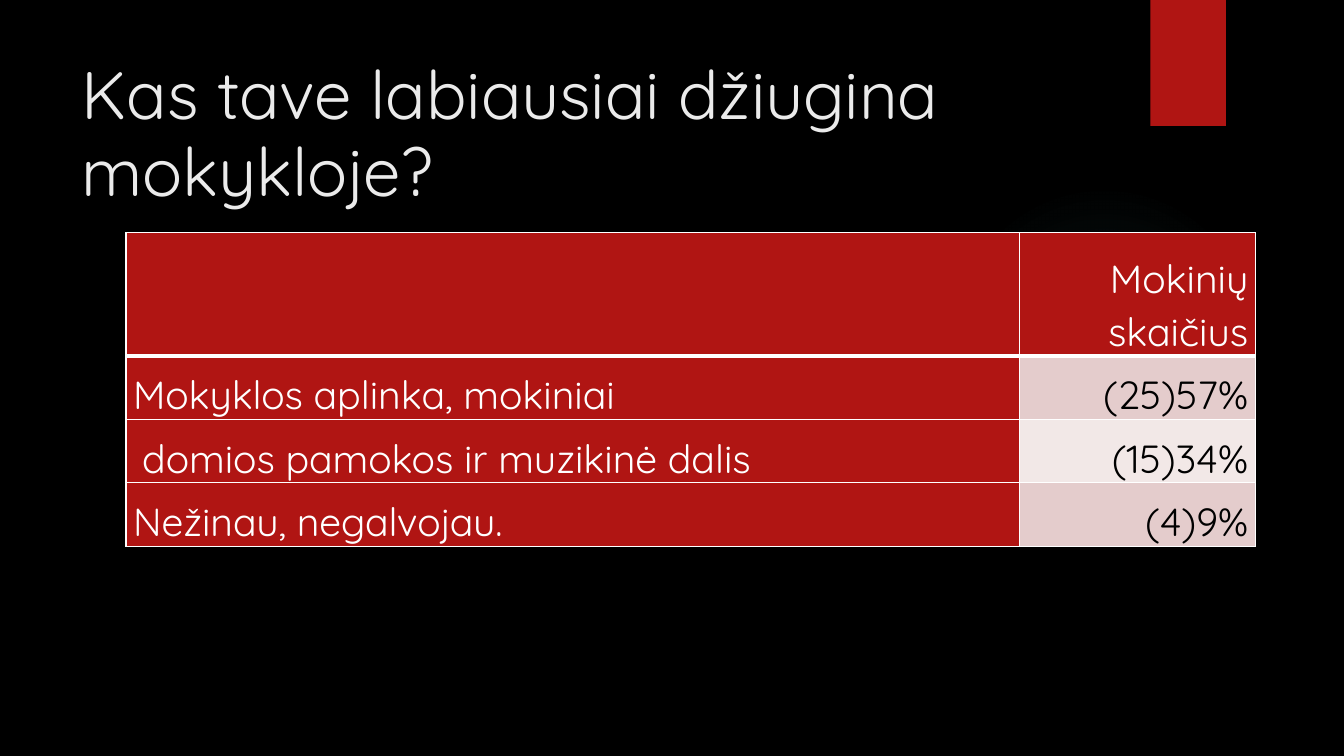
from lxml.etree import SubElement
from pptx import Presentation
from pptx.dml.color import RGBColor
from pptx.enum.shapes import MSO_SHAPE
from pptx.enum.text import MSO_ANCHOR, PP_ALIGN
from pptx.oxml import parse_xml
from pptx.oxml.ns import nsdecls, qn
from pptx.util import Inches, Pt

TITLE = "Kas tave labiausiai džiugina mokykloje?"
ROWS = [
    ("", "Mokinių skaičius"),
    ("Mokyklos aplinka, mokiniai", "(25)57%"),
    ("Įdomios pamokos ir muzikinė dalis", "(15)34%"),
    ("Nežinau, negalvojau.", "(4)9%"),
]
COLUMN_WIDTHS = (8.86, 2.34)
ROW_HEIGHTS = (1.22, 0.63, 0.63, 0.63)
GLOW_STOPS = ((0, 7), (36, 6), (69, 0))  # position and opacity, in percent

THEME = {
    "font": "Quicksand", "title_size": 48, "table_size": 28,
    "background": "000000", "title": "EBEBEB", "accent": "B01513",
    "light": "FFFFFF", "dark": "000000", "bands": ("E4CCCC", "F2E8E7"),
    "glow": "50B9C1",
}


def paint(fill, color):
    fill.solid()
    fill.fore_color.rgb = RGBColor.from_string(THEME[color] if color in THEME else color)


def style(paragraph, size, color):
    paragraph.font.name = THEME["font"]
    paragraph.font.size = Pt(THEME[size])
    paragraph.font.color.rgb = RGBColor.from_string(THEME[color])


def add_plain_shape(page, kind, left, top, width, height):
    shape = page.shapes.add_shape(
        kind, Inches(left), Inches(top), Inches(width), Inches(height))
    shape.shadow.inherit = False
    shape.line.fill.background()
    return shape


def add_glow(page):
    glow = add_plain_shape(page, MSO_SHAPE.OVAL, 9.41, 1.83, 3.08, 3.08)
    stops = "".join(
        f'<a:gs pos="{position * 1000}"><a:srgbClr val="{THEME["glow"]}">'
        f'<a:alpha val="{opacity * 1000}"/></a:srgbClr></a:gs>'
        for position, opacity in GLOW_STOPS)
    gradient = parse_xml(
        f'<a:gradFill {nsdecls("a")}><a:gsLst>{stops}</a:gsLst><a:path path="circle">'
        '<a:fillToRect l="50000" t="50000" r="50000" b="50000"/></a:path></a:gradFill>')
    glow._element.spPr.find(qn("a:prstGeom")).addnext(gradient)


def add_ribbon(page):
    ribbon = add_plain_shape(page, MSO_SHAPE.RECTANGLE, 11.41, 0, 0.75, 1.25)
    paint(ribbon.fill, "accent")


def add_title(page):
    box = page.shapes.add_textbox(Inches(0.71), Inches(0.5), Inches(10.29), Inches(1.53))
    frame = box.text_frame
    frame.word_wrap = True
    frame.vertical_anchor = MSO_ANCHOR.TOP
    frame.margin_top = Inches(0.08)
    para = frame.paragraphs[0]
    para.text = TITLE
    para.line_spacing = 0.95
    style(para, "title_size", "title")


def add_borders(cell, widths):
    """Draw the left, right, top and bottom edges, ahead of the cell's fill."""
    properties = cell._tc.get_or_add_tcPr()
    for index, (edge, width) in enumerate(zip(("lnL", "lnR", "lnT", "lnB"), widths)):
        line = SubElement(properties, qn(f"a:{edge}"), w=str(Pt(width)))
        SubElement(SubElement(line, qn("a:solidFill")), qn("a:srgbClr"), val=THEME["light"])
        properties.insert(index, line)


def fill_cell(cell, text, row, column):
    is_value = row > 0 and column == 1
    cell.vertical_anchor = MSO_ANCHOR.BOTTOM
    cell.margin_left = cell.margin_right = Inches(0.07)
    cell.margin_top = cell.margin_bottom = 0
    para = cell.text_frame.paragraphs[0]
    para.text = text
    para.alignment = PP_ALIGN.RIGHT if column == 1 else PP_ALIGN.LEFT
    para.line_spacing = 1.07
    para.space_after = Pt(8)
    style(para, "table_size", "dark" if is_value else "light")
    paint(cell.fill, THEME["bands"][(row - 1) % 2] if is_value else "accent")
    add_borders(cell, (1, 1, 3 if row == 1 else 1, 3 if row == 0 else 1))


def add_answers(page):
    frame = page.shapes.add_table(
        len(ROWS), len(COLUMN_WIDTHS), Inches(1.25), Inches(2.31),
        Inches(sum(COLUMN_WIDTHS)), Inches(sum(ROW_HEIGHTS)))
    table = frame.table
    for column, width in zip(table.columns, COLUMN_WIDTHS):
        column.width = Inches(width)
    for row, height in zip(table.rows, ROW_HEIGHTS):
        row.height = Inches(height)
    for row, texts in enumerate(ROWS):
        for column, text in enumerate(texts):
            fill_cell(table.cell(row, column), text, row, column)


def main():
    deck = Presentation()
    deck.slide_width, deck.slide_height = Inches(13.33), Inches(7.5)
    page = deck.slides.add_slide(deck.slide_layouts[6])
    paint(page.background.fill, "background")
    add_glow(page)
    add_ribbon(page)
    add_title(page)
    add_answers(page)
    deck.save("out.pptx")


if __name__ == "__main__":
    main()
